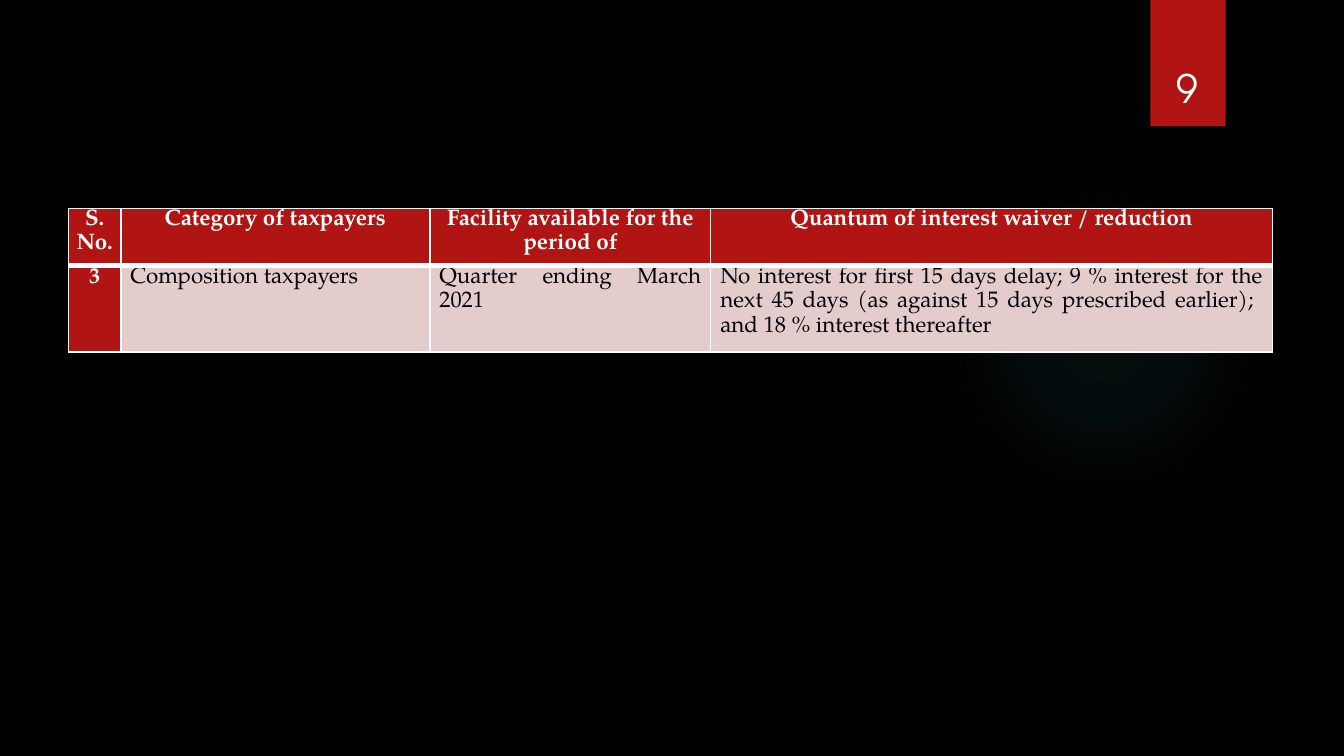
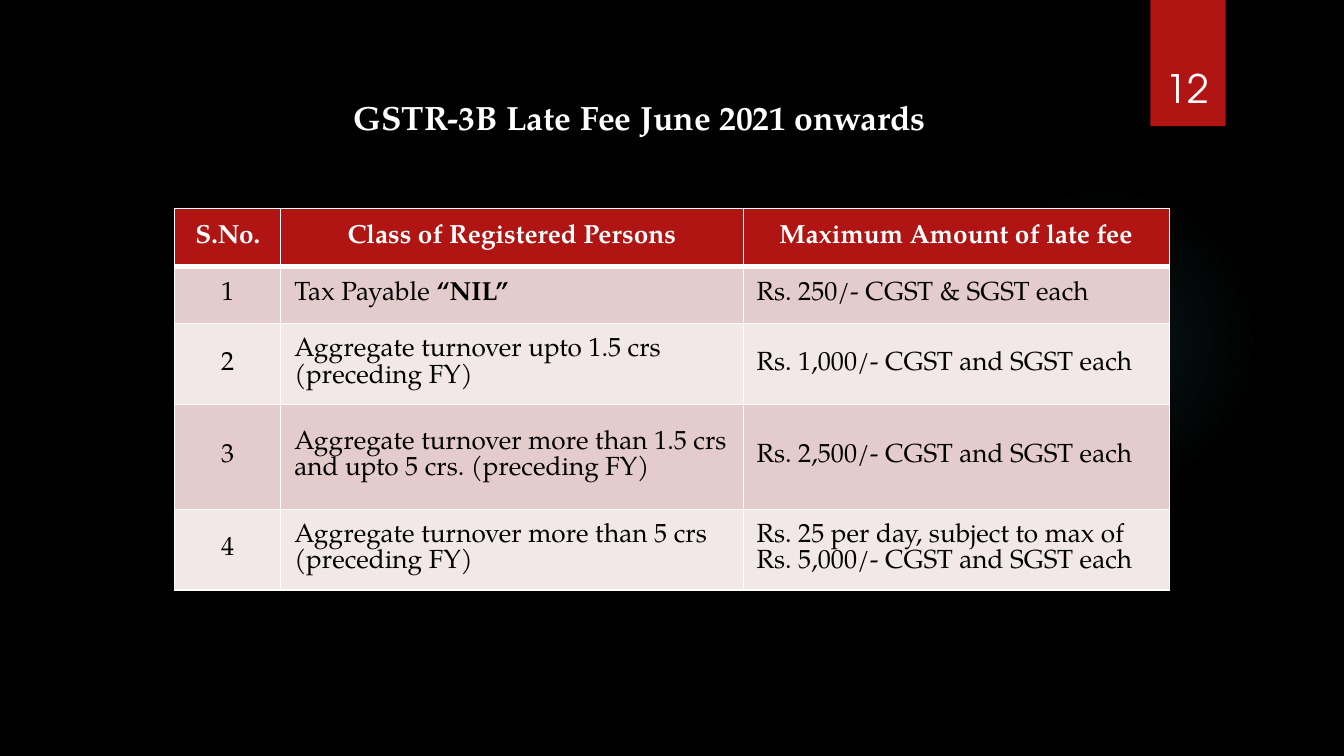
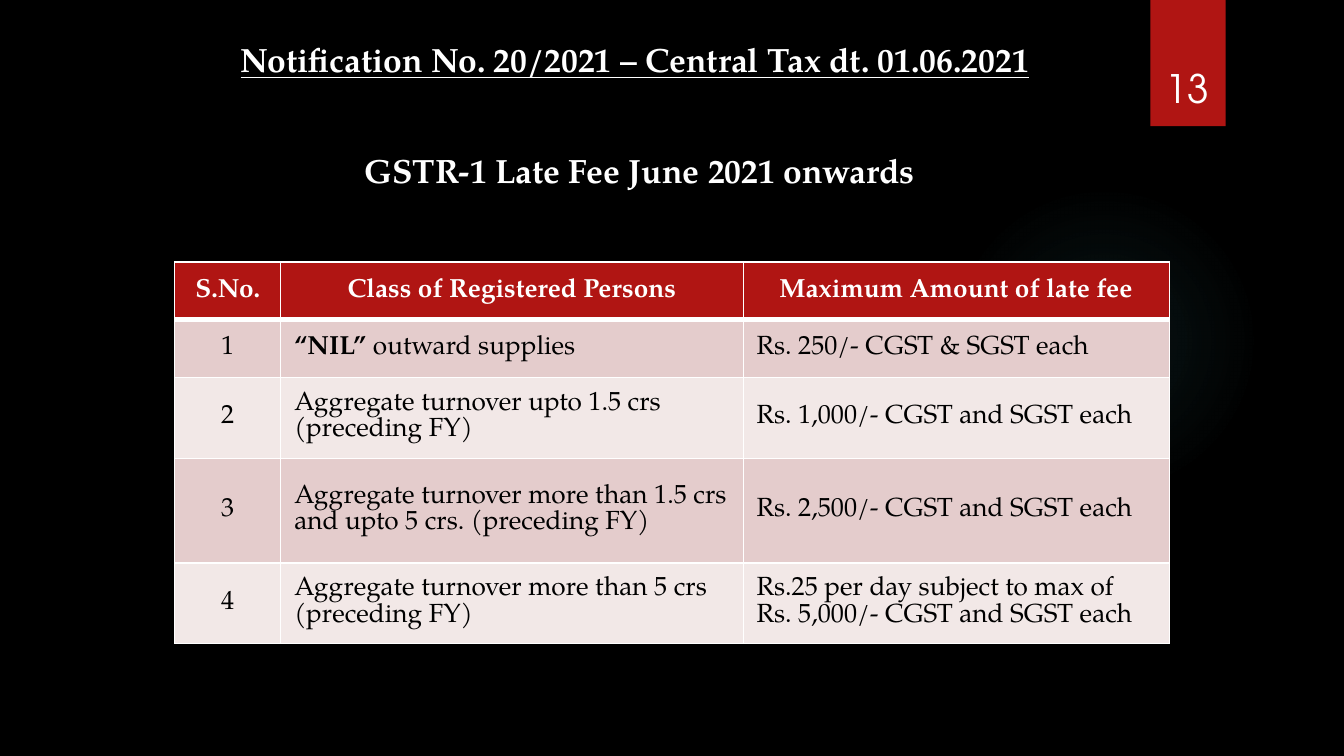
from lxml import etree
from pptx import Presentation
from pptx.dml.color import RGBColor
from pptx.enum import lang, shapes, text
from pptx.oxml import ns
from pptx.util import Inches, Pt

RED, WHITE, BLACK, TEAL = "B01513", "FFFFFF", "000000", "50B9C1"
BANDS = ("E4CCCC", "F2E8E7")
SERIF, SANS = "TeX Gyre Pagella", "TeX Gyre Adventor"
LEFT, MID, FULL = text.PP_ALIGN.LEFT, text.PP_ALIGN.CENTER, text.PP_ALIGN.JUSTIFY
FEES = (0.43, 0.43, 0.6, 0.78, 0.6)
WIDE = 10


def paint(fill, tone):
    fill.solid()
    fill.fore_color.rgb = RGBColor.from_string(tone)


def style(par, size, tone, face=SERIF, bold=False, line=False, align=MID):
    par.alignment = align
    for run in par.runs:
        font = run.font
        font.size, font.name, font.underline = Pt(size), face, line
        font.language_id = lang.MSO_LANGUAGE_ID.ENGLISH_US
        if font.bold is None:
            font.bold = bold
        font.color.rgb = RGBColor.from_string(tone)


def place(shape, box):
    shape.left, shape.top, shape.width, shape.height = map(Inches, box)


def glow(slide, box):
    disc = slide.shapes.add_shape(shapes.MSO_SHAPE.OVAL, *map(Inches, box))
    disc.shadow.inherit = False
    disc.line.fill.background()
    stops = "".join(
        f'<a:gs pos="{pos}000"><a:srgbClr val="{TEAL}"><a:alpha val="{alpha}000"/>'
        "</a:srgbClr></a:gs>" for pos, alpha in ((0, 7), (36, 6), (69, 0)))
    grad = etree.fromstring(
        f'<a:gradFill {ns.nsdecls("a")}><a:gsLst>{stops}</a:gsLst><a:path path="circle">'
        '<a:fillToRect l="50000" t="50000" r="50000" b="50000"/></a:path></a:gradFill>')
    disc.element.spPr.find(ns.qn("a:prstGeom")).addnext(grad)


def badge(slide, num, box):
    left, top, wide, high = box
    flag = slide.shapes.add_shape(shapes.MSO_SHAPE.RECTANGLE, *map(Inches, box))
    flag.shadow.inherit = False
    flag.line.fill.background()
    paint(flag.fill, RED)
    label = slide.shapes.add_textbox(
        *map(Inches, (left - 0.07, top + 0.24, wide + 0.13, high - 0.31)))
    frame = label.text_frame
    frame.word_wrap = True
    frame.vertical_anchor = text.MSO_ANCHOR.BOTTOM
    frame.margin_left = frame.margin_right = Inches(0.07)
    frame.margin_top = frame.margin_bottom = Inches(0.04)
    frame.text = str(num)
    style(frame.paragraphs[0], 21, WHITE, SANS)


def start(deck, num, layout):
    slide = deck.slides.add_slide(deck.slide_layouts[layout])
    paint(slide.background.fill, BLACK)
    glow(slide, (7.06, 1.38, 2.31, 2.31))
    badge(slide, num, (8.56, 0, 0.56, 0.94))
    return slide


def head(shape, words, box, line=False):
    place(shape, box)
    frame = shape.text_frame
    frame.word_wrap = True
    frame.auto_size = text.MSO_AUTO_SIZE.SHAPE_TO_FIT_TEXT
    frame.vertical_anchor = text.MSO_ANCHOR.TOP
    frame.text = words
    style(frame.paragraphs[0], 18, WHITE, bold=True, line=line)


def edge(cell, row):
    props = cell._tc.get_or_add_tcPr()
    thin, thick = 0.75, 3
    sizes = {"L": thin, "R": thin, "T": thick if row == 1 else thin,
             "B": thin if row else thick}
    for spot, (side, size) in enumerate(sizes.items()):
        props.insert(spot, etree.fromstring(
            f'<a:ln{side} {ns.nsdecls("a")} w="{Pt(size)}"><a:solidFill>'
            f'<a:srgbClr val="{WHITE}"/></a:solidFill></a:ln{side}>'))


def write(cell, words):
    par = cell.text_frame.paragraphs[0]
    for spot, part in enumerate(words.split("**")):
        if part:
            run = par.add_run()
            run.text = part
            if spot % 2:
                run.font.bold = True
    return par


def grid(slide, spot, cols, rows, data, size, align, tight=False):
    box = (*spot, sum(cols), sum(rows))
    table = slide.shapes.add_table(len(rows), len(cols), *map(Inches, box)).table
    for col, wide in zip(table.columns, cols):
        col.width = Inches(wide)
    for y, (high, line) in enumerate(zip(rows, data)):
        table.rows[y].height = Inches(high)
        for x, words in enumerate(line):
            cell = table.cell(y, x)
            top = y == 0 or (tight and x == 0)
            paint(cell.fill, RED if top else BANDS[(y - 1) % 2])
            edge(cell, y)
            par = write(cell, words)
            style(par, size, WHITE if top else BLACK, bold=top,
                  align=align if y and x else MID)
            if tight:
                par.line_spacing = 1.07
                cell.margin_top = cell.margin_bottom = 0
                cell.margin_left = cell.margin_right = Inches(0.07 if y else 0.06)
            else:
                cell.vertical_anchor = text.MSO_ANCHOR.MIDDLE


def waiver(deck):
    slide = start(deck, 9, 6)
    data = (
        ("S.No.", "Category of taxpayers", "Facility available for the period of",
         "Quantum of interest waiver / reduction"),
        ("3", "Composition taxpayers", "Quarter ending March 2021",
         "No interest for first 15 days delay; 9 % interest for the next 45 days "
         "(as against 15 days prescribed earlier);  and 18 % interest thereafter"))
    grid(slide, (0.51, 1.55), (0.39, 2.3, 2.09, 4.18), (0.42, 0.64), data, 12, FULL, True)


def fees(slide, top, first, last):
    each = "CGST and SGST each"
    data = (
        ("S.No.", "Class of Registered Persons", "Maximum Amount of late fee"),
        ("1", first, "Rs. 250/- CGST & SGST each"),
        ("2", "Aggregate turnover upto 1.5 crs (preceding FY)", f"Rs. 1,000/- {each}"),
        ("3", "Aggregate turnover more than 1.5 crs and upto 5 crs. (preceding FY)",
         f"Rs. 2,500/- {each}"),
        ("4", "Aggregate turnover more than 5 crs (preceding FY)",
         f"{last} Rs. 5,000/- {each}"))
    grid(slide, (1.3, top), (0.79, 3.44, 3.17), FEES, data, 14, LEFT)


def main():
    deck = Presentation()
    deck.slide_width, deck.slide_height = Inches(WIDE), Inches(WIDE * 9 / 16)
    waiver(deck)

    slide = start(deck, 12, 5)
    head(slide.shapes.title, "GSTR-3B Late Fee June 2021 onwards", (2.32, 0.67, 4.88, 0.4))
    fees(slide, 1.55, "Tax Payable **“NIL”**", "Rs. 25 per day, subject to max of")

    slide = start(deck, 13, 5)
    head(slide.shapes.title, "Notification No. 20/2021 – Central Tax dt. 01.06.2021",
         (1.3, 0.24, 6.85, 0.4), True)
    head(slide.shapes.add_textbox(0, 0, 0, 0), "GSTR-1 Late Fee June 2021 onwards",
         (2.32, 1.07, 4.88, 0.4))
    fees(slide, 1.95, "**“NIL”** outward supplies", "Rs.25 per day subject to max of ")

    deck.save("out.pptx")


if __name__ == "__main__":
    main()
